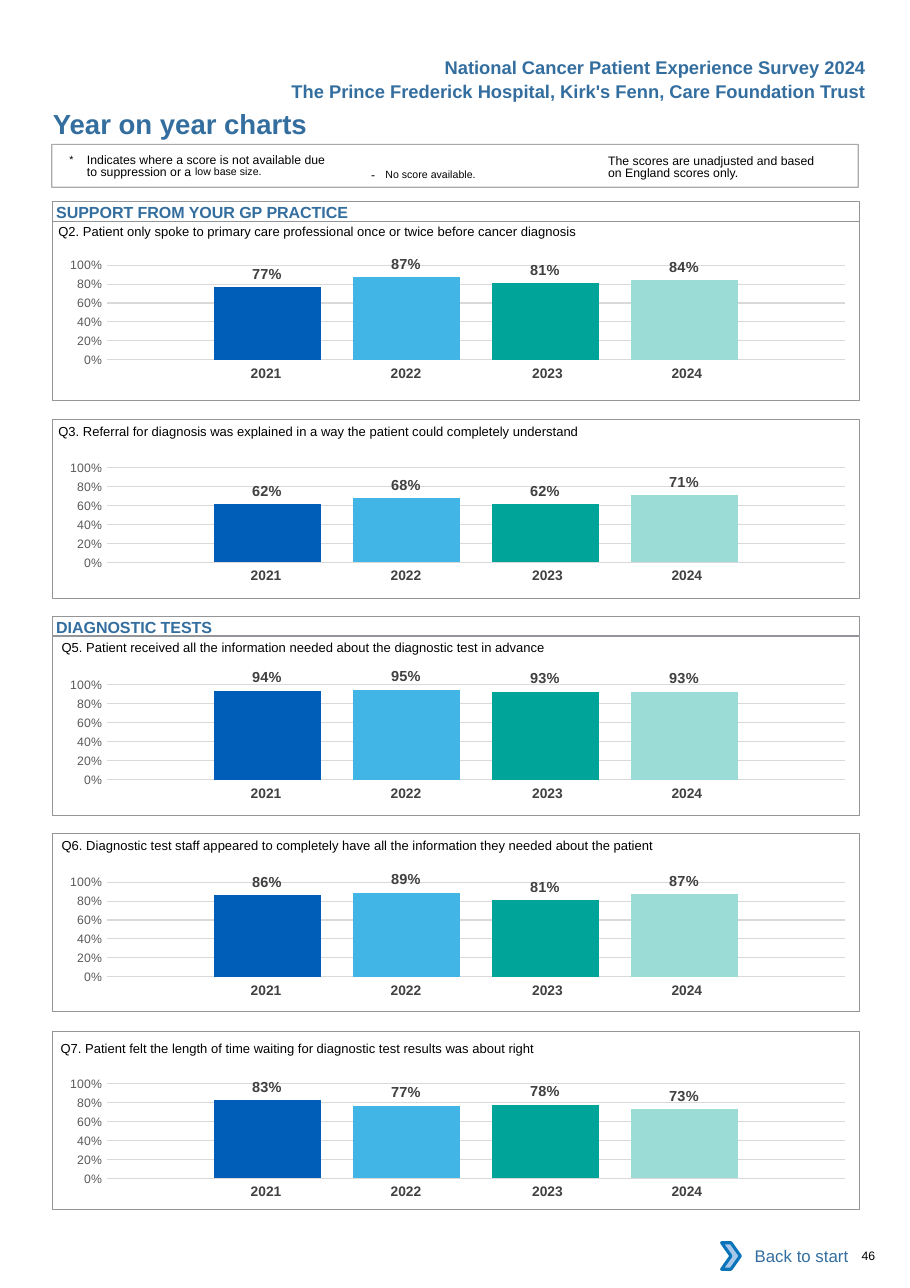
from lxml import etree
from pptx import Presentation
from pptx.chart.data import CategoryChartData
from pptx.dml.color import RGBColor
from pptx.enum.chart import XL_CHART_TYPE, XL_LABEL_POSITION, XL_TICK_MARK
from pptx.enum.shapes import MSO_SHAPE
from pptx.enum.text import MSO_ANCHOR, PP_ALIGN
from pptx.oxml import parse_xml
from pptx.oxml.ns import nsdecls, qn
from pptx.util import Inches, Pt

BLUE, GREY, BLACK = "336E9F", "939598", "000000"
FRAME_LEFT, FRAME_WIDTH, FRAME_HEIGHT = 0.48, 7.32, 1.62
YEARS = ["2021", "2022", "2023", "2024"]
YEAR_COLORS = ["005EB8", "41B6E6", "00A499", "9CDCD7"]
YEAR_WIDTHS = [1.27, 1.27, 1.34, 1.27]
YEAR_RIGHT_INSETS = [0, 0, 0.04, 0.12]


def color(hex_string):
    return RGBColor.from_string(hex_string)


def write(shape, spans, ink=BLACK, bold=False, align=PP_ALIGN.LEFT,
          insets=(0, 0, 0, 0), hanging=0, leading=None):
    """Fill a shape or cell with one paragraph of (text, size, baseline) spans."""
    frame = shape.text_frame
    frame.word_wrap = True
    frame.margin_left, frame.margin_top, frame.margin_right, frame.margin_bottom = map(Inches, insets)
    para = frame.paragraphs[0]
    para.alignment = align
    if leading:
        para.line_spacing = Pt(leading)
    if hanging:
        properties = para._p.get_or_add_pPr()
        properties.set("marL", str(Inches(hanging)))
        properties.set("indent", str(-Inches(hanging)))
    for text, size, baseline in spans:
        span = para.add_run()
        span.text = text
        span.font.name = "Arial"
        span.font.size = Pt(size)
        span.font.bold = bold
        span.font.color.rgb = color(ink)
        if baseline:
            span._r.get_or_add_rPr().set("baseline", str(baseline * 1000))


deck = Presentation()
deck.slide_width, deck.slide_height = Inches(8.26), Inches(11.69)
page = deck.slides.add_slide(deck.slide_layouts[6])

# Page header, key and page number
box_texts = [
    ((1.96, 0.46, 6, 0.3), [("National Cancer Patient Experience Survey 2024", 12, 0)],
     dict(ink=BLUE, bold=True, align=PP_ALIGN.RIGHT, insets=(0.1, 0.05, 0.1, 0.05))),
    ((1.96, 0.68, 6, 0.3), [("The Prince Frederick Hospital, Kirk's Fenn, Care Foundation Trust", 12, 0)],
     dict(ink=BLUE, bold=True, align=PP_ALIGN.RIGHT, insets=(0.1, 0.05, 0.1, 0.05))),
    ((0.48, 0.97, 4.5, 0.3), [("Year on year charts", 18, 0)], dict(ink=BLUE, bold=True)),
    ((0.63, 1.38, 2.4, 0.26),
     [("*\t", 12, 3), ("Indicates where a score is not available due to suppression or a ", 8, 0),
      ("low base size.", 12, 7)],
     dict(insets=(0, 0.03, 0, 0), hanging=0.16, leading=8.1)),
    ((3.27, 1.41, 1.83, 0.24), [("-\t", 8, 0), ("No score available.", 12, 3)],
     dict(insets=(0.1, 0.05, 0.1, 0.05), hanging=0.13)),
    ((5.52, 1.38, 1.95, 0.27), [("The scores are unadjusted and based on England scores only.", 8, 0)],
     dict(insets=(0, 0.03, 0, 0), leading=8.1)),
    ((7.82, 11.33, 0.41, 0.13), [("46", 8, 0)], {}),
]
for place, spans, style in box_texts:
    write(page.shapes.add_textbox(*map(Inches, place)), spans, **style)

# Question panels: question, left and top of its text, tops of frame and chart, scores
panels = [
    ("Q2. Patient only spoke to primary care professional once or twice before cancer diagnosis",
     0.53, 1.94, 2.01, 2.22, [0.77, 0.87, 0.81, 0.84]),
    ("Q3. Referral for diagnosis was explained in a way the patient could completely understand",
     0.53, 3.75, 3.81, 4.06, [0.62, 0.68, 0.62, 0.71]),
    ("Q5. Patient received all the information needed about the diagnostic test in advance",
     0.56, 5.71, 5.78, 6.03, [0.94, 0.95, 0.93, 0.93]),
    ("Q6. Diagnostic test staff appeared to completely have all the information they needed about the patient",
     0.56, 7.51, 7.56, 7.82, [0.86, 0.89, 0.81, 0.87]),
    ("Q7. Patient felt the length of time waiting for diagnostic test results was about right",
     0.55, 9.35, 9.36, 9.65, [0.83, 0.77, 0.78, 0.73]),
]
for question, text_left, text_top, frame_top, chart_top, scores in panels:
    box = page.shapes.add_textbox(Inches(text_left), Inches(text_top), Inches(7.2), Inches(0.24))
    write(box, [(question, 8.5, 0)], insets=(0, 0.09, 0, 0))

    table = page.shapes.add_table(1, len(YEARS), Inches(1.73), Inches(chart_top + 1.05),
                                  Inches(sum(YEAR_WIDTHS)), Inches(0.27)).table
    table.first_row = table.horz_banding = False
    for column, (year, width, right) in enumerate(zip(YEARS, YEAR_WIDTHS, YEAR_RIGHT_INSETS)):
        table.columns[column].width = Inches(width)
        cell = table.cell(0, column)
        cell.fill.background()
        write(cell, [(year, 9, 0)], ink="414042", bold=True, align=PP_ALIGN.CENTER)
        cell.margin_left, cell.margin_right = Inches(0.1), Inches(right)
        cell.margin_top = cell.margin_bottom = Inches(0.05)

    data = CategoryChartData(number_format="0%")
    data.categories = ["1"]
    for number, score in enumerate(scores, 1):
        data.add_series(f"Series {number}", [score])
    chart = page.shapes.add_chart(XL_CHART_TYPE.COLUMN_CLUSTERED, Inches(0.39), Inches(chart_top),
                                  Inches(7.32), Inches(1.29), data).chart
    chart.has_title = chart.has_legend = False
    chart.font.name, chart.font.size = "Calibri", Pt(10)
    chart.font.color.rgb = color(BLACK)
    chart.category_axis.visible = False
    axis = chart.value_axis
    axis.minimum_scale, axis.maximum_scale, axis.major_unit = 0, 1, 0.2
    axis.major_tick_mark = axis.minor_tick_mark = XL_TICK_MARK.NONE
    axis.format.line.fill.background()
    axis.major_gridlines.format.line.color.rgb = color("D9D9D9")
    axis.major_gridlines.format.line.width = Pt(0.75)
    axis.tick_labels.number_format = "0%"
    axis.tick_labels.number_format_is_linked = False
    axis.tick_labels.font.name, axis.tick_labels.font.size = "Arial", Pt(8)
    axis.tick_labels.font.color.rgb = color("595959")
    plot = chart.plots[0]
    plot.vary_by_categories = False
    plot.gap_width, plot.overlap = 200, -30
    for series, fill in zip(plot.series, YEAR_COLORS):
        series.format.fill.solid()
        series.format.fill.fore_color.rgb = color(fill)
        labels = series.data_labels
        labels.show_value = True
        labels.position = XL_LABEL_POSITION.OUTSIDE_END
        labels.number_format, labels.number_format_is_linked = "0%", False
        labels.font.name, labels.font.size, labels.font.bold = "Arial", Pt(9.5), True
        labels.font.color.rgb = color("404040")
    plot_area = chart._chartSpace.chart.plotArea
    for old_layout in plot_area.findall(qn("c:layout")):
        plot_area.remove(old_layout)
    plot_area.insert(0, parse_xml(
        f'<c:layout {nsdecls("c")}><c:manualLayout><c:layoutTarget val="inner"/>'
        '<c:xMode val="edge"/><c:yMode val="edge"/><c:x val="0.079"/><c:y val="0.145"/>'
        '<c:w val="0.915"/><c:h val="0.666"/></c:manualLayout></c:layout>'))

# Outlines: key, section headings and panel frames
outlines = [(0.47, 1.31, 0.39, 0.75, ""),
            (FRAME_LEFT, 1.83, 0.18, 0.5, "SUPPORT FROM YOUR GP PRACTICE"),
            (FRAME_LEFT, 5.59, 0.18, 0.5, "DIAGNOSTIC TESTS")]
outlines += [(FRAME_LEFT, panel[3], FRAME_HEIGHT, 0.5, "") for panel in panels]
for left, top, height, weight, heading in outlines:
    outline = page.shapes.add_shape(MSO_SHAPE.RECTANGLE, Inches(left), Inches(top),
                                    Inches(FRAME_WIDTH), Inches(height))
    outline.shadow.inherit = False
    outline.fill.background()
    outline.line.color.rgb = color(GREY)
    outline.line.width = Pt(weight)
    if heading:
        outline.text_frame.vertical_anchor = MSO_ANCHOR.TOP
        write(outline, [(heading, 10.5, 0)], ink=BLUE, bold=True, insets=(0.03, 0.01, 0, 0))
    if top == 1.31:
        line_color = outline.line._ln.find(".//" + qn("a:srgbClr"))
        etree.SubElement(line_color, qn("a:alpha")).set("val", "80000")

# Back to start button
button = page.shapes.add_shape(MSO_SHAPE.RECTANGLE, Inches(6.62), Inches(11.19), Inches(1.18), Inches(0.42))
button.shadow.inherit = False
button.fill.solid()
button.fill.fore_color.rgb = color("FFFFFF")
button.line.fill.background()
button.text_frame.vertical_anchor = MSO_ANCHOR.MIDDLE
write(button, [("Back to start", 11, 0)], ink=BLUE, align=PP_ALIGN.RIGHT, insets=(0.1, 0.05, 0.1, 0.05))

chevron = page.shapes.add_shape(MSO_SHAPE.CHEVRON, Inches(6.55), Inches(11.28), Inches(0.17), Inches(0.24))
chevron.shadow.inherit = False
chevron.fill.solid()
chevron.fill.fore_color.rgb = color("A8C7E9")
chevron.line.color.rgb = color("0A74BB")
chevron.line.width = Pt(2)

deck.save("out.pptx")
